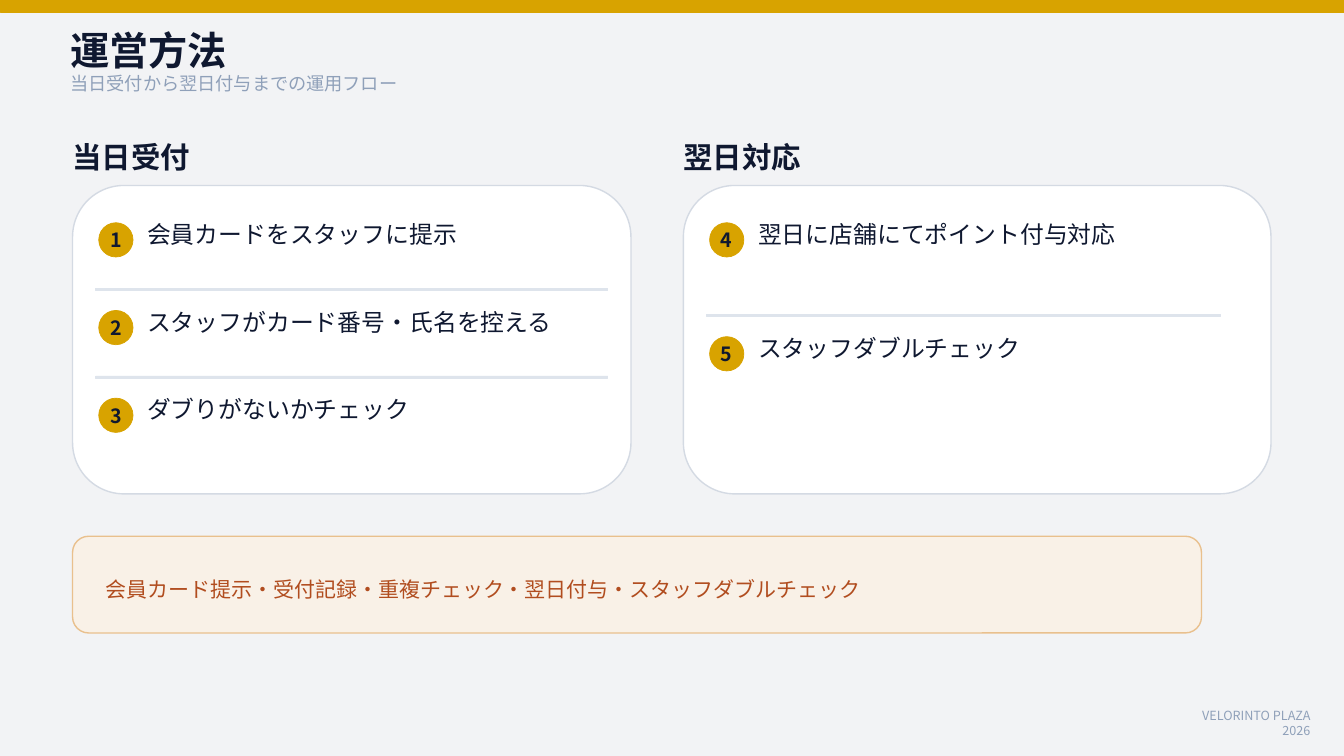
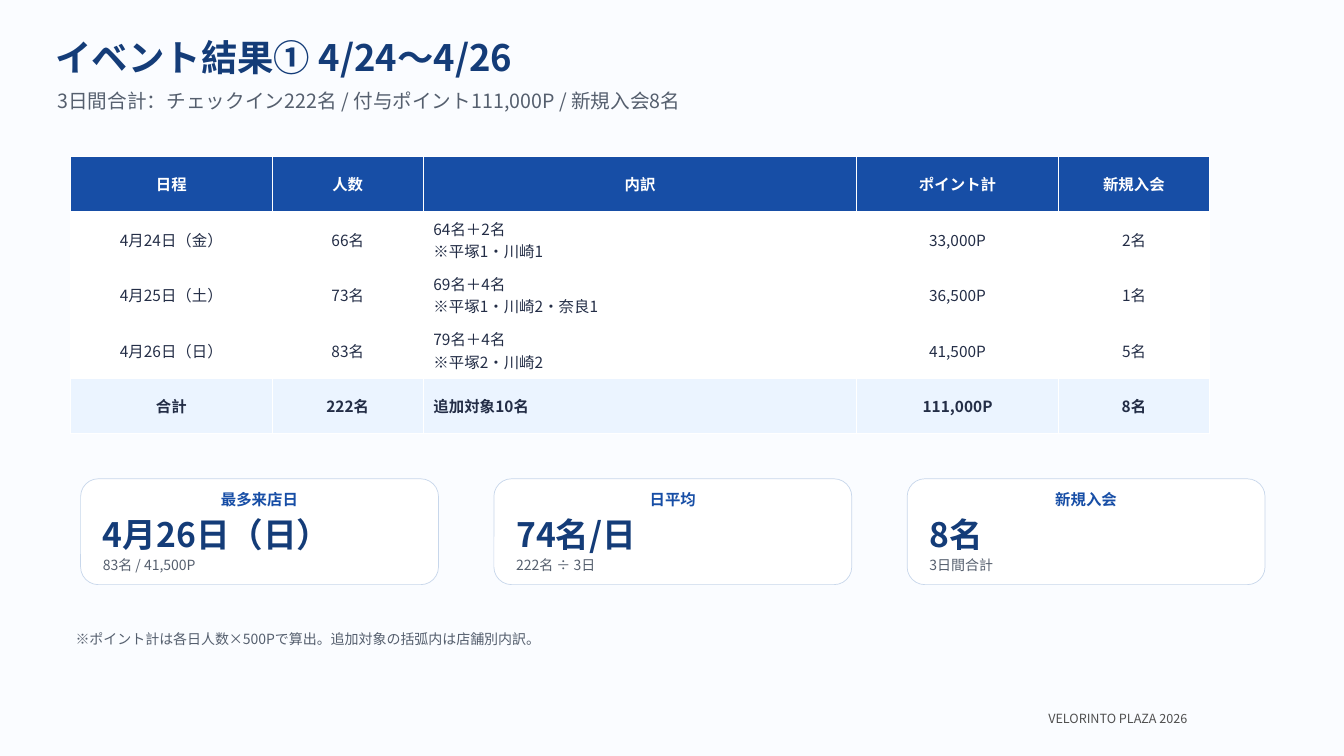
"""Build two slides: the reception workflow and the event results."""
from lxml.etree import SubElement
from pptx import Presentation
from pptx.dml.color import RGBColor
from pptx.enum.shapes import MSO_SHAPE
from pptx.enum.text import MSO_ANCHOR, PP_ALIGN
from pptx.oxml.ns import qn
from pptx.util import Pt

FONT = "Noto Sans CJK JP"
FOOTER = "VELORINTO PLAZA 2026"
NAVY, GOLD, MIST, RULE = "0F1830", "D8A300", "8FA0B9", "DEE4EC"
BLUE, DEEP_BLUE, GRAY, INK = "174EA6", "143C78", "555F6E", "232D46"
WHITE = "FFFFFF"
LEFT, CENTER, RIGHT = PP_ALIGN.LEFT, PP_ALIGN.CENTER, PP_ALIGN.RIGHT


def add_box(slide, place, preset=None, fill=None, line=None, line_width=0.5, insets=(0, 0, 0, 0)):
    lengths = [Pt(value) for value in place]
    if preset is None:
        box = slide.shapes.add_textbox(*lengths)
    else:
        box = slide.shapes.add_shape(preset, *lengths)
        box.shadow.inherit = False
        box.fill.solid()
        box.fill.fore_color.rgb = RGBColor.from_string(fill)
        box.line.color.rgb = RGBColor.from_string(line)
        box.line.width = Pt(line_width)
        box.text_frame.vertical_anchor = MSO_ANCHOR.MIDDLE
    frame = box.text_frame
    frame.word_wrap = True
    frame.margin_left, frame.margin_top, frame.margin_right, frame.margin_bottom = map(Pt, insets)
    return frame


def write(frame, text, size, color, bold=False, align=LEFT, before=0):
    paragraph = frame.paragraphs[0]
    if paragraph.runs:
        paragraph = frame.add_paragraph()
    paragraph.alignment = align
    if before:
        paragraph.space_before = Pt(before)
    run = paragraph.add_run()
    run.text = text
    run.font.name = FONT
    run.font.size = Pt(size)
    run.font.bold = bold
    run.font.color.rgb = RGBColor.from_string(color)
    SubElement(run._r.get_or_add_rPr(), qn("a:ea"), typeface=FONT)


deck = Presentation()
deck.slide_width, deck.slide_height = Pt(960), Pt(540)

headers = [
    ("F2F3F5",
     ("運営方法", (50.4, 18.72, 273.6, 32.4), 28, NAVY),
     ("当日受付から翌日付与までの運用フロー", (50.4, 51.84, 468, 18), 13, MIST),
     ((849.6, 505.44, 86.4, 14.4), MIST, RIGHT)),
    ("FAFCFF",
     ("イベント結果① 4/24〜4/26", (39.6, 25.2, 878.4, 32.4), 26, DEEP_BLUE),
     ("3日間合計：チェックイン222名 / 付与ポイント111,000P / 新規入会8名",
      (41.04, 63.36, 864, 25.2), 14, GRAY),
     ((748.8, 507.6, 180, 18), "505050", LEFT)),
]
for background, title, subtitle, (footer_place, footer_color, footer_align) in headers:
    slide = deck.slides.add_slide(deck.slide_layouts[6])
    slide.background.fill.solid()
    slide.background.fill.fore_color.rgb = RGBColor.from_string(background)
    for (text, place, size, color), bold in ((title, True), (subtitle, False)):
        write(add_box(slide, place), text, size, color, bold)
    write(add_box(slide, footer_place), FOOTER, 9, footer_color, align=footer_align)

workflow, results = deck.slides

add_box(workflow, (0, 0, 960, 8.64), MSO_SHAPE.RECTANGLE, GOLD, GOLD)

phases = [
    ("当日受付", 51.84, 398.88, 365.76, 62.64,
     ["会員カードをスタッフに提示", "スタッフがカード番号・氏名を控える", "ダブりがないかチェック"]),
    ("翌日対応", 488.16, 419.76, 367.2, 81.36,
     ["翌日に店舗にてポイント付与対応", "スタッフダブルチェック"]),
]
number = 0
for heading, left, width, rule_width, pitch, steps in phases:
    write(add_box(workflow, (left, 99.36, 158.4, 24.48)), heading, 21, NAVY, True)
    add_box(workflow, (left, 132.48, width, 220.32), MSO_SHAPE.ROUNDED_RECTANGLE,
            WHITE, "D4DAE3", 1)
    for row, step in enumerate(steps):
        number += 1
        top = 159.12 + row * pitch
        badge = add_box(workflow, (left + 18.72, top, 24.48, 24.48), MSO_SHAPE.OVAL, GOLD, GOLD)
        write(badge, str(number), 14, NAVY, True, CENTER)
        write(add_box(workflow, (left + 53.28, top - 2.16, 320, 33.12)), step, 17, NAVY)
        if row:
            add_box(workflow, (left + 16.56, top - 15.84, rule_width, 1.44),
                    MSO_SHAPE.RECTANGLE, RULE, RULE)

summary = add_box(workflow, (51.84, 383.04, 806.4, 69.12), MSO_SHAPE.ROUNDED_RECTANGLE,
                  "F9F1E7", "E9C08D", 1, (20.16, 11.52, 14.4, 5.76))
write(summary, "会員カード提示・受付記録・重複チェック・翌日付与・スタッフダブルチェック", 15, "B14D1F")

daily_results = [
    ["日程", "人数", "内訳", "ポイント計", "新規入会"],
    ["4月24日（金）", "66名", "64名＋2名\n※平塚1・川崎1", "33,000P", "2名"],
    ["4月25日（土）", "73名", "69名＋4名\n※平塚1・川崎2・奈良1", "36,500P", "1名"],
    ["4月26日（日）", "83名", "79名＋4名\n※平塚2・川崎2", "41,500P", "5名"],
    ["合計", "222名", "追加対象10名", "111,000P", "8名"],
]
column_widths = [144, 108, 309.6, 144, 108]
row_styles = [(BLUE, WHITE, True)] + [(WHITE, INK, False)] * 3 + [("EBF4FF", INK, True)]
table = results.shapes.add_table(len(daily_results), len(column_widths), Pt(50.4), Pt(111.6),
                                 Pt(sum(column_widths)), Pt(198)).table
table.horz_banding = False
for column, width in zip(table.columns, column_widths):
    column.width = Pt(width)
for row, (values, (fill, color, bold)) in enumerate(zip(daily_results, row_styles)):
    table.rows[row].height = Pt(39.6)
    for column, value in enumerate(values):
        cell = table.cell(row, column)
        cell.fill.solid()
        cell.fill.fore_color.rgb = RGBColor.from_string(fill)
        cell.vertical_anchor = MSO_ANCHOR.MIDDLE
        align = LEFT if column == 2 and row else CENTER
        for text in value.split("\n"):
            write(cell.text_frame, text, 11, color, bold, align)

highlights = [
    ("最多来店日", "4月26日（日）", "83名 / 41,500P"),
    ("日平均", "74名/日", "222名 ÷ 3日"),
    ("新規入会", "8名", "3日間合計"),
]
for index, (label, figure, detail) in enumerate(highlights):
    card = add_box(results, (57.6 + index * 295.2, 342, 255.6, 75.6),
                   MSO_SHAPE.ROUNDED_RECTANGLE, WHITE, "C8D7EB",
                   insets=(12.24, 7.92, 12.24, 7.92))
    write(card, label, 11, BLUE, True, CENTER)
    write(card, figure, 24, DEEP_BLUE, True, before=4)
    write(card, detail, 10, GRAY, before=2)

write(add_box(results, (54, 450, 828, 25.2)),
      "※ポイント計は各日人数×500Pで算出。追加対象の括弧内は店舗別内訳。", 10, GRAY)

deck.save("out.pptx")
